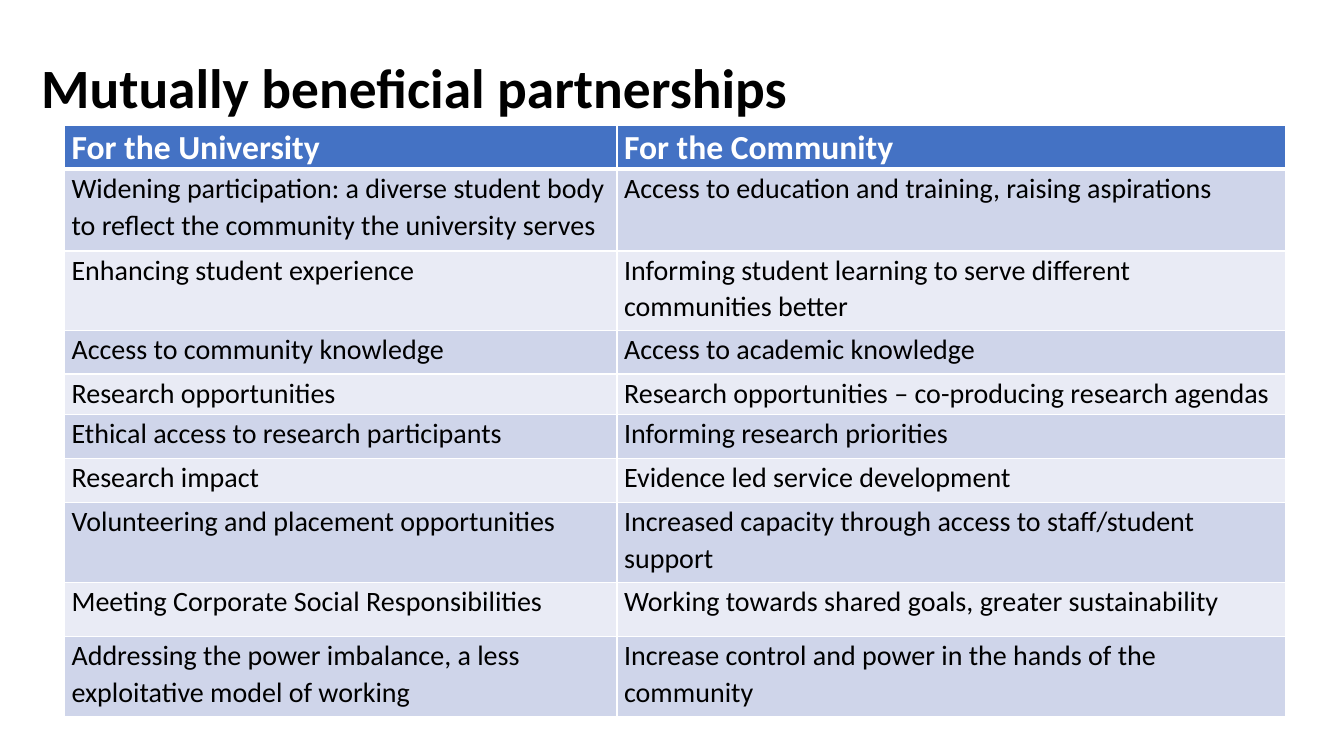
from pptx import Presentation
from pptx.dml.color import RGBColor
from pptx.enum.text import MSO_ANCHOR
from pptx.oxml import parse_xml
from pptx.oxml.ns import nsdecls
from pptx.util import Inches, Pt

FONT = "Calibri"
WHITE, BLACK, BLUE = "FFFFFF", "000000", "4472C4"
BANDS = ["CFD5EA", "E9EBF5"]
WIDTHS = [5.48, 6.63]
HEIGHTS = [0.44, 0.81, 0.79, 0.43, 0.4, 0.44, 0.44, 0.79, 0.54, 0.79]
ROWS = [
    ("For the University", "For the Community"),
    ("Widening participation: a diverse student body to reflect the community the university serves",
     "Access to education and training, raising aspirations"),
    ("Enhancing student experience",
     "Informing student learning to serve different communities better"),
    ("Access to community knowledge", "Access to academic knowledge"),
    ("Research opportunities", "Research opportunities – co-producing research agendas"),
    ("Ethical access to research participants", "Informing research priorities"),
    ("Research impact", "Evidence led service development"),
    ("Volunteering and placement opportunities",
     "Increased capacity through access to staff/student support"),
    ("Meeting Corporate Social Responsibilities",
     "Working towards shared goals, greater sustainability"),
    ("Addressing the power imbalance, a less exploitative model of working",
     "Increase control and power in the hands of the community"),
]


def color(code):
    return RGBColor.from_string(code)


def write(frame, text, size, code, bold, spacing):
    frame.text = text
    frame.word_wrap = True
    line = frame.paragraphs[0]
    line.line_spacing = spacing
    font = line.runs[0].font
    font.name, font.size, font.bold = FONT, Pt(size), bold
    font.color.rgb = color(code)


def border(cell, top, bottom):
    props = cell._tc.get_or_add_tcPr()
    for side, width in (("L", 1), ("R", 1), ("T", top), ("B", bottom)):
        props.append(parse_xml(
            f'<a:ln{side} {nsdecls("a")} w="{Pt(width)}"><a:solidFill>'
            f'<a:srgbClr val="{WHITE}"/></a:solidFill></a:ln{side}>'))


def add_title(slide, left, top, width, height):
    box = slide.shapes.add_textbox(Inches(left), Inches(top), Inches(width), Inches(height))
    frame = box.text_frame
    frame.vertical_anchor = MSO_ANCHOR.MIDDLE
    write(frame, "Mutually beneficial partnerships", 39.6, BLACK, True, 0.9)


def add_grid(slide, left, top):
    table = slide.shapes.add_table(
        len(ROWS), len(WIDTHS), Inches(left), Inches(top),
        Inches(sum(WIDTHS)), Inches(sum(HEIGHTS))).table
    for column, width in zip(table.columns, WIDTHS):
        column.width = Inches(width)
    for index, (row, height, texts) in enumerate(zip(table.rows, HEIGHTS, ROWS)):
        row.height = Inches(height)
        head = index == 0
        for cell, text in zip(row.cells, texts):
            cell.margin_left = cell.margin_right = Inches(0.07)
            cell.margin_top = cell.margin_bottom = 0
            border(cell, 3 if index == 1 else 1, 3 if head else 1)
            cell.fill.solid()
            cell.fill.fore_color.rgb = color(BLUE if head else BANDS[(index - 1) % 2])
            write(cell.text_frame, text, 24 if head else 20,
                  WHITE if head else BLACK, head, 1.07)


def main():
    deck = Presentation()
    deck.slide_width, deck.slide_height = Inches(13.33), Inches(7.5)
    slide = deck.slides.add_slide(deck.slide_layouts[6])
    add_title(slide, 0.31, 0.55, 11.5, 0.7)
    add_grid(slide, 0.64, 1.24)
    deck.save("out.pptx")


if __name__ == "__main__":
    main()
